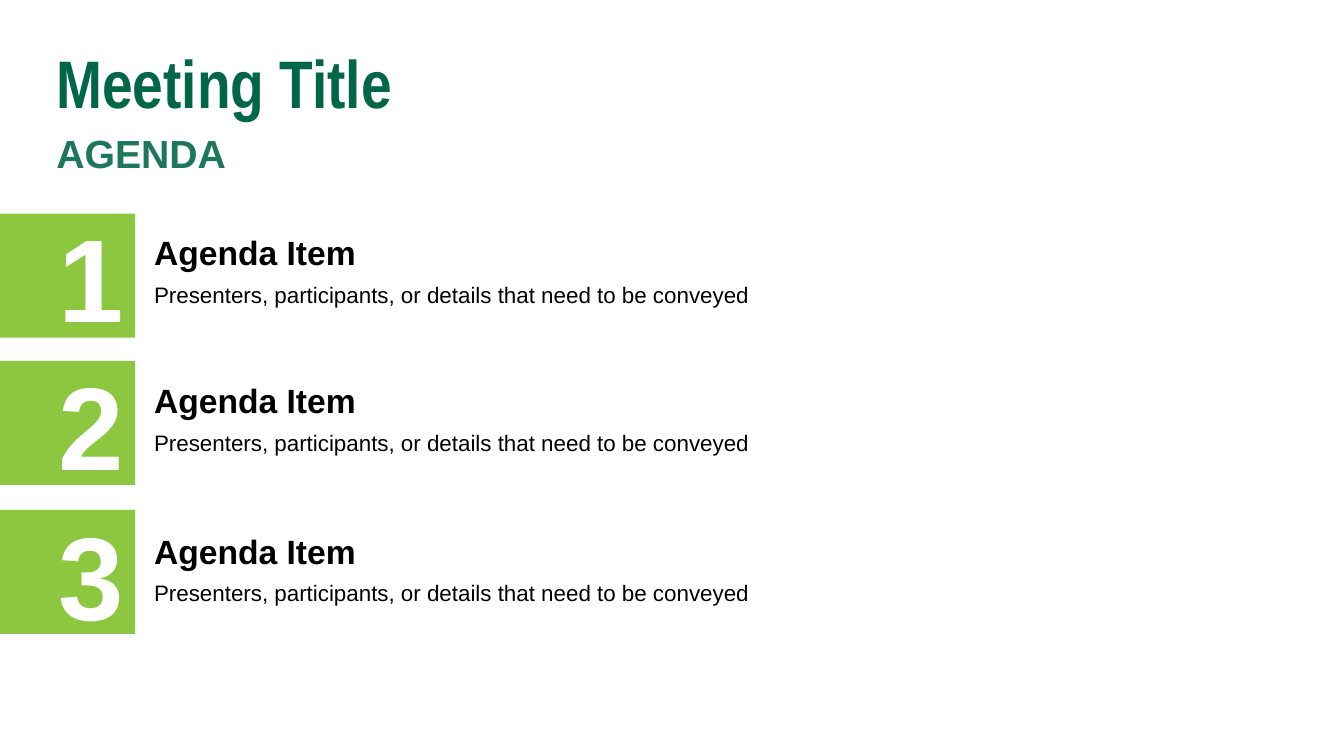
from pptx import Presentation
from pptx.dml.color import RGBColor
from pptx.enum import shapes, text
from pptx.util import Inches, Pt

COLORS = {"bar": "8DC63F", "title": "006648", "agenda": "1C775C",
          "number": "FFFFFF", "body": "000000"}
TITLE = "Meeting Title"
SUBTITLE = "AGENDA"
DETAILS = "Presenters, participants, or details that need to be conveyed"
ITEMS = [
    {"number": "1", "heading": "Agenda Item", "details": DETAILS, "bar_top": 2.12, "text_top": 2.08},
    {"number": "2", "heading": "Agenda Item", "details": DETAILS, "bar_top": 3.58, "text_top": 3.55},
    {"number": "3", "heading": "Agenda Item", "details": DETAILS, "bar_top": 5.06, "text_top": 5.04},
]
TOP, MIDDLE, BOTTOM = text.MSO_ANCHOR.TOP, text.MSO_ANCHOR.MIDDLE, text.MSO_ANCHOR.BOTTOM


def add_bar(s, top):
    """Add the green bar that bleeds off the left edge."""
    sp = s.shapes.add_shape(shapes.MSO_SHAPE.RECTANGLE, Inches(-1.78), Inches(top),
                            Inches(3.12), Inches(1.23))
    sp.shadow.inherit = False
    sp.fill.solid()
    sp.fill.fore_color.rgb = RGBColor.from_string(COLORS["bar"])
    sp.line.fill.background()


def add_label(s, box, words, size, color, bold=True, font="Arial",
              spacing=None, anchor=TOP, indent=0):
    """Add a one-line text box."""
    tf = s.shapes.add_textbox(*map(Inches, box)).text_frame
    tf.word_wrap = True
    tf.vertical_anchor = anchor
    p = tf.paragraphs[0]
    if spacing:
        p.line_spacing = spacing
    if indent:
        p._p.get_or_add_pPr().set("marL", str(Inches(indent)))
    r = p.add_run()
    r.text = words
    r.font.name = font
    r.font.size = Pt(size)
    r.font.bold = bold
    r.font.color.rgb = RGBColor.from_string(COLORS[color])


def main():
    """Build the agenda slide."""
    prs = Presentation()
    prs.slide_width, prs.slide_height = Inches(13.33), Inches(7.5)
    s = prs.slides.add_slide(prs.slide_layouts[6])
    for item in ITEMS:
        add_bar(s, item["bar_top"])
    add_label(s, (0.34, 1.23, 12.48, 0.57), SUBTITLE, 28, "agenda", indent=0.12)
    add_label(s, (0.46, 0.35, 10.92, 0.91), TITLE, 48, "title",
              font="Arial Narrow", anchor=MIDDLE)
    for item in ITEMS:
        top = item["text_top"]
        add_label(s, (0.48, top, 1.93, 1.42), item["number"], 84, "number",
                  spacing=0.9, anchor=BOTTOM)
        add_label(s, (1.43, top + 0.23, 2.64, 0.46), item["heading"], 24, "body",
                  spacing=0.8, anchor=MIDDLE)
        add_label(s, (1.43, top + 0.69, 7.06, 0.4), item["details"], 16, "body",
                  bold=False, spacing=0.9)
    prs.save("out.pptx")


if __name__ == "__main__":
    main()
